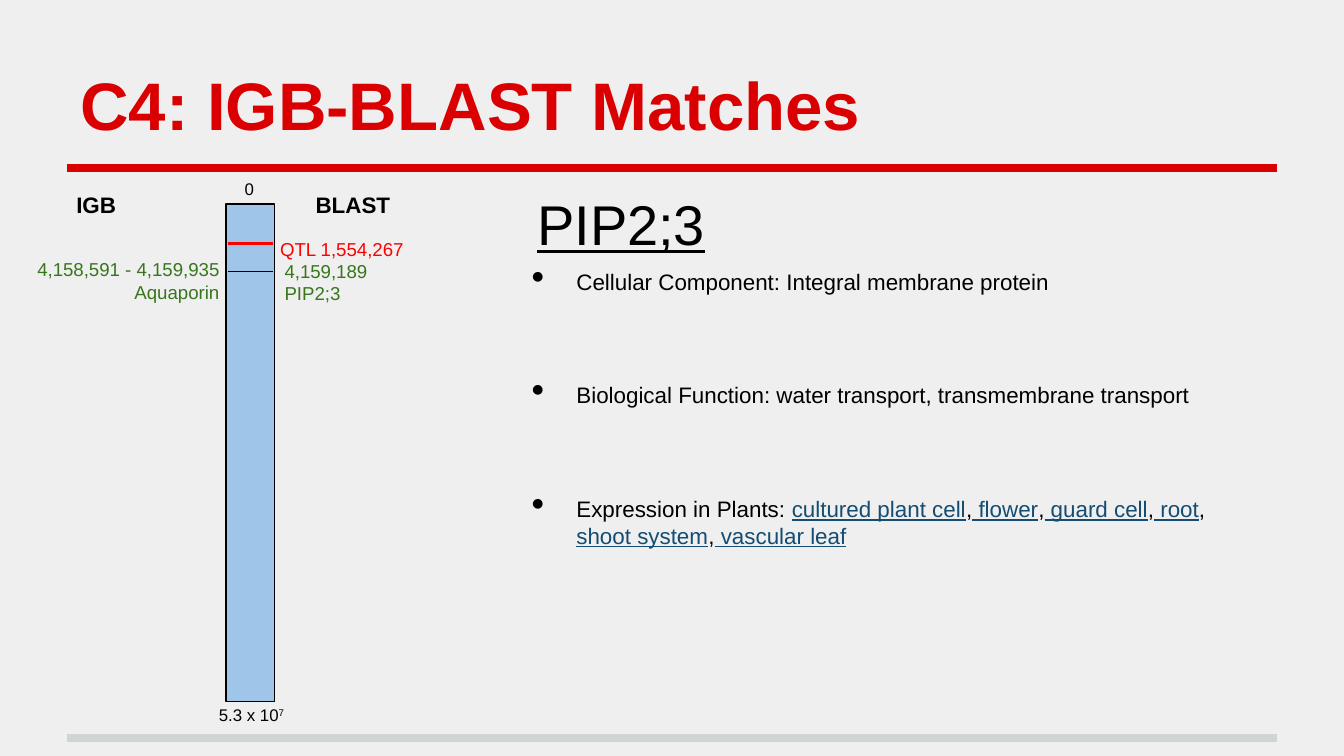
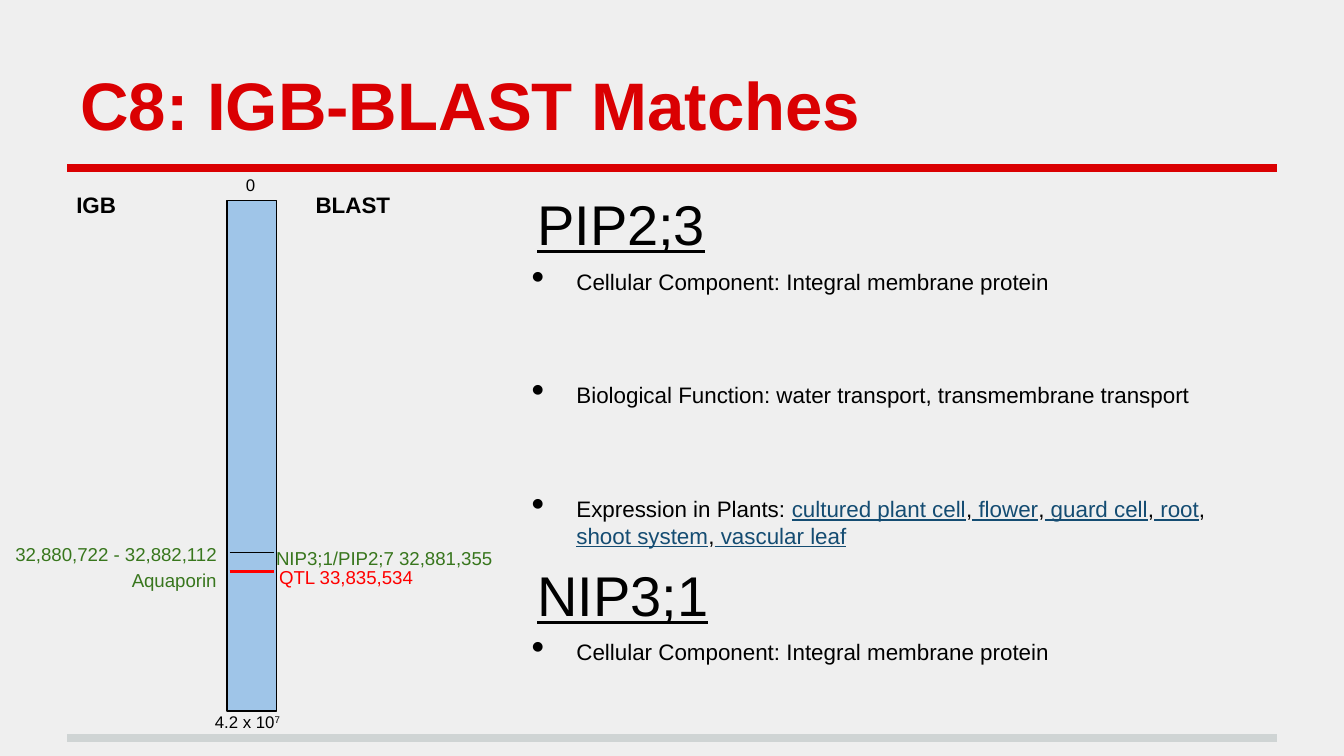
import pptx
import pptx.dml.color
import pptx.enum.shapes
import pptx.enum.text
import pptx.oxml.ns
import pptx.util
from lxml import etree

Pt = pptx.util.Pt
ALIGN = pptx.enum.text.PP_ALIGN
ANCHOR = pptx.enum.text.MSO_ANCHOR
SHAPES = pptx.enum.shapes

FONT = "Arial"
INSET = 7.2
COLORS = {
    "background": "EFEFEF",
    "title": "DA0002",
    "footer": "CFD4D4",
    "text": "000000",
    "link": "144C72",
    "bar": "9FC5E8",
    "qtl": "FF0000",
    "gene": "38761D",
}

TITLE_BOX = (36, 16.6, 648, 67.7)
HEADER_BOX = (33.8, 95, 193.7, 26.6)
BODY_BOX = (265.7, 94.3, 418.3, 293)

TISSUES = ["cultured plant cell", "flower", "guard cell", "root",
           "shoot system", "vascular leaf"]
CELLULAR = "Cellular Component: Integral membrane protein"
PIP_GENE = {
    "name": "PIP2;3",
    "facts": [CELLULAR,
              "Biological Function: water transport, transmembrane transport",
              "Expression in Plants: "],
    "tissues": TISSUES,
}
NIP_GENE = {"name": "NIP3;1", "facts": [CELLULAR], "tissues": []}

CHROMOSOMES = [
    {
        "title": "C4: IGB-BLAST Matches",
        "bar": (121, 109.4, 26, 266.5),
        "length": "5.3 x 10",
        "length_offset": (-10.8, -3.6),
        "marks": [("qtl", 20.9, 1.5), ("text", 36, 0.75)],
        "labels": [
            ("QTL 1,554,267", "qtl", (3.6, 9.4, 98.6, 23), ALIGN.RIGHT, 1.15),
            ("4,159,189\nPIP2;3", "gene", (24.4, 22.4, 108, 23), ALIGN.LEFT, 1),
            ("4,158,591 - 4,159,935 Aquaporin", "gene",
             (-113.1, 21.6, 116.6, 23), ALIGN.RIGHT, 1),
        ],
        "genes": [PIP_GENE],
    },
    {
        "title": "C8: IGB-BLAST Matches",
        "bar": (121.7, 107.3, 26.6, 273.6),
        "length": "4.2 x 10",
        "length_offset": (-13.7, -5.1),
        "marks": [("text", 188.6, 0.75), ("qtl", 198.7, 1.5)],
        "labels": [
            ("QTL 33,835,534", "qtl", (6.5, 187.2, 100, 23), ALIGN.RIGHT, 1.15),
            ("32,880,722 - 32,882,112\nAquaporin", "gene",
             (-154.8, 176.4, 156.2, 23), ALIGN.RIGHT, 1.15),
            ("NIP3;1/PIP2;7 32,881,355", "gene",
             (15.8, 177.1, 133.2, 24.5), ALIGN.RIGHT, 1.15),
        ],
        "genes": [PIP_GENE, NIP_GENE],
    },
]


def color(name):
    return pptx.dml.color.RGBColor.from_string(COLORS[name])


def style_span(span, size, color_name="text", bold=False, underline=False):
    span.font.name = FONT
    span.font.size = Pt(size)
    span.font.color.rgb = color(color_name)
    span.font.bold = bold
    span.font.underline = underline


def add_span(para, text, size, **style):
    span = para.add_run()
    span.text = text
    style_span(span, size, **style)
    return span


def add_text(page, box, text, size, align=ALIGN.LEFT, anchor=ANCHOR.TOP, **style):
    frame = page.shapes.add_textbox(*map(Pt, box)).text_frame
    frame.word_wrap = True
    frame.vertical_anchor = anchor
    frame.margin_left = frame.margin_right = Pt(INSET)
    frame.margin_top = frame.margin_bottom = Pt(INSET)
    frame.text = text
    for para in frame.paragraphs:
        para.alignment = align
        for span in para.runs:
            style_span(span, size, **style)
    return frame


def add_line(page, left, right, top, color_name, width):
    line = page.shapes.add_connector(
        SHAPES.MSO_CONNECTOR.STRAIGHT, Pt(left), Pt(top), Pt(right), Pt(top))
    line.line.color.rgb = color(color_name)
    line.line.width = Pt(width)
    etree.SubElement(line._element.spPr, pptx.oxml.ns.qn("a:effectLst"))


def draw_frame(page, box, title):
    left, top, width, height = box
    page.background.fill.solid()
    page.background.fill.fore_color.rgb = color("background")
    for offset, color_name in ((378.7, "footer"), (73.4, "title")):
        add_line(page, left, left + width, top + offset, color_name, 4)
    add_text(page, box, title, 36, anchor=ANCHOR.BOTTOM,
             color_name="title", bold=True)


def draw_headers(page, box):
    left, top, width, height = box
    column = 65.5
    for offset, text in ((0, "IGB"), (width - column, "BLAST")):
        add_text(page, (left + offset, top, column, height), text, 12, bold=True)


def draw_chromosome(page, box, chromosome):
    left, top, width, height = box
    bar = page.shapes.add_shape(SHAPES.MSO_SHAPE.RECTANGLE, *map(Pt, box))
    bar.shadow.inherit = False
    bar.fill.solid()
    bar.fill.fore_color.rgb = color("bar")
    bar.line.color.rgb = color("text")
    bar.line.width = Pt(0.75)

    add_text(page, (left + 2.9, top - 19, 36.7, 13.7), "0", 9)
    shift, drop = chromosome["length_offset"]
    length = add_text(page, (left + shift, top + height + drop, 77, 15),
                      chromosome["length"], 9)
    exponent = add_span(length.paragraphs[0], "7", 9)
    exponent.font._element.set("baseline", "30000")

    for color_name, offset, thickness in chromosome["marks"]:
        add_line(page, left + 1.4, left + 25.2, top + offset, color_name, thickness)
    for text, color_name, offsets, align, spacing in chromosome["labels"]:
        shift, drop, label_width, label_height = offsets
        label = add_text(page, (left + shift, top + drop, label_width, label_height),
                         text, 10, align, color_name=color_name)
        label.paragraphs[-1].line_spacing = spacing


def indent(para, margin, hanging):
    properties = para._p.get_or_add_pPr()
    properties.set("marL", str(Pt(margin)))
    properties.set("indent", str(-Pt(hanging)))
    return properties


def add_bullet(para):
    qn = pptx.oxml.ns.qn
    properties = indent(para, 36, 24)
    bullet_color = etree.SubElement(properties, qn("a:buClr"))
    etree.SubElement(bullet_color, qn("a:srgbClr"), val=COLORS["text"])
    etree.SubElement(properties, qn("a:buSzPct"), val="167000")
    etree.SubElement(properties, qn("a:buChar"), char="•")


def draw_genes(page, box, genes):
    lines = [line for gene in genes for line in (gene["name"], *gene["facts"])]
    frame = add_text(page, box, "\n".join(lines), 12)
    paragraphs = iter(frame.paragraphs)
    for gene in genes:
        heading = next(paragraphs)
        heading.space_before = Pt(6)
        indent(heading, 27, 12)
        style_span(heading.runs[0], 30, underline=True)
        for number, fact in enumerate(gene["facts"]):
            para = next(paragraphs)
            para.space_before = Pt(46.5 if number else 6)
            add_bullet(para)
        for number, tissue in enumerate(gene["tissues"]):
            if number:
                add_span(para, ",", 12)
                tissue = " " + tissue
            add_span(para, tissue, 12, color_name="link", underline=True)


def main():
    deck = pptx.Presentation()
    deck.slide_width, deck.slide_height = Pt(720), Pt(405)
    for chromosome in CHROMOSOMES:
        page = deck.slides.add_slide(deck.slide_layouts[6])
        draw_frame(page, TITLE_BOX, chromosome["title"])
        draw_genes(page, BODY_BOX, chromosome["genes"])
        draw_chromosome(page, chromosome["bar"], chromosome)
        draw_headers(page, HEADER_BOX)
    deck.save("out.pptx")


if __name__ == "__main__":
    main()
